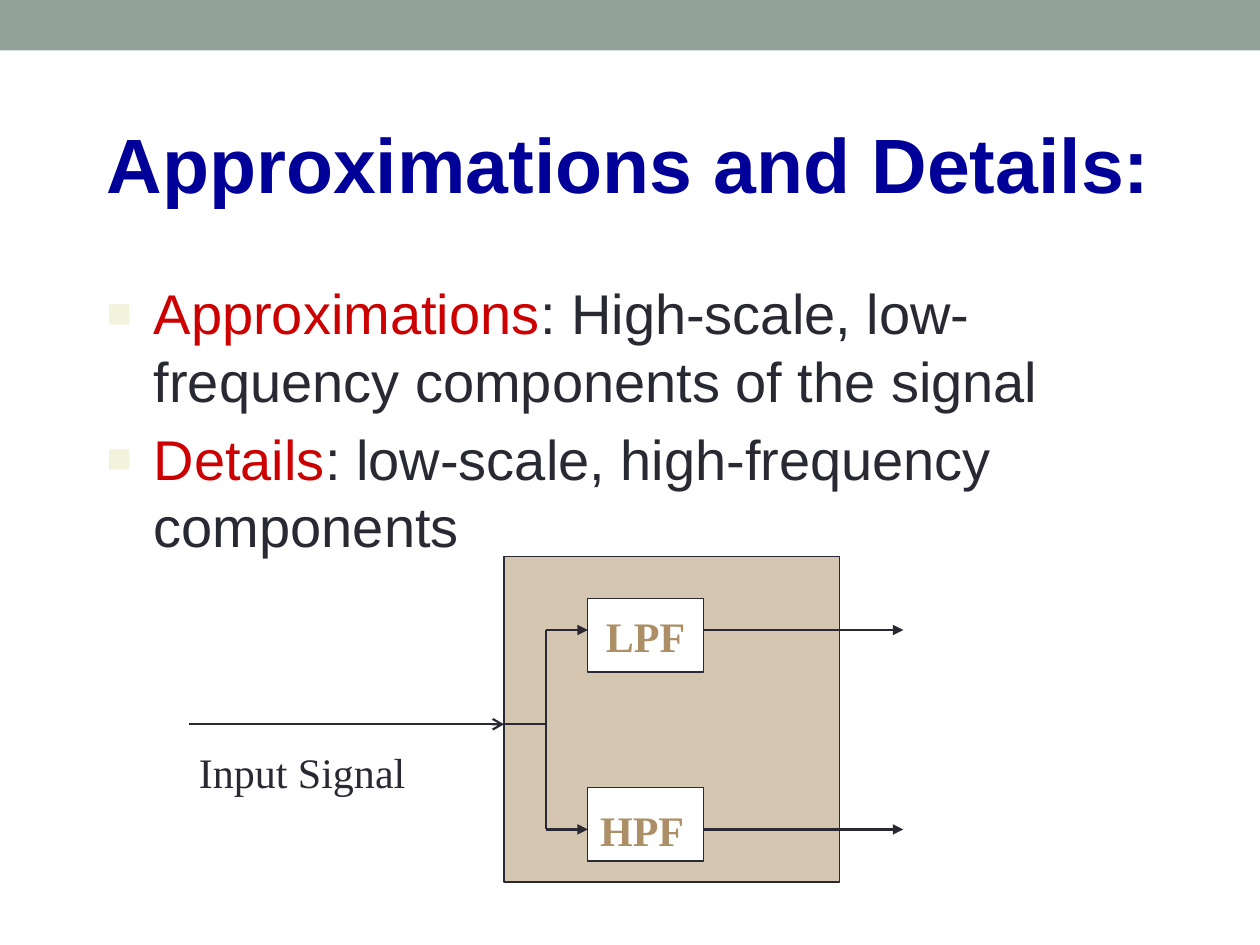
from lxml import etree
from pptx import Presentation
from pptx.dml.color import RGBColor
from pptx.enum.shapes import MSO_CONNECTOR, MSO_SHAPE
from pptx.enum.text import MSO_ANCHOR, PP_ALIGN
from pptx.oxml.ns import qn
from pptx.util import Cm, Pt

RECTANGLE = MSO_SHAPE.RECTANGLE
STRAIGHT = MSO_CONNECTOR.STRAIGHT
MIDDLE, TOP = MSO_ANCHOR.MIDDLE, MSO_ANCHOR.TOP
CENTER = PP_ALIGN.CENTER

SANS, SERIF = "Arial", "Times New Roman"
INK, TAN, WHITE = "292934", "AD8F67", "FFFFFF"
SAGE, NAVY, RED, CREAM = "93A299", "000099", "CC0000", "F3F2DC"


def color(value):
    return RGBColor.from_string(value)


def add_span(para, text, size, font, hue, bold=False):
    span = para.add_run()
    span.text = text
    span.font.size = Pt(size)
    span.font.name = font
    span.font.bold = bold
    span.font.color.rgb = color(hue)


def add_text_box(page, left, top, width, height, anchor=TOP, wrap=True):
    box = page.shapes.add_textbox(Cm(left), Cm(top), Cm(width), Cm(height))
    box.text_frame.word_wrap = wrap
    box.text_frame.vertical_anchor = anchor
    return box.text_frame


def add_rectangle(page, left, top, width, height, fill, line=None, opacity=100):
    box = page.shapes.add_shape(RECTANGLE, Cm(left), Cm(top), Cm(width), Cm(height))
    box.shadow.inherit = False
    box.fill.solid()
    box.fill.fore_color.rgb = color(fill)
    if opacity < 100:
        tint = box.fill._xPr.find(qn("a:solidFill"))[0]
        etree.SubElement(tint, qn("a:alpha"), val=str(opacity * 1000))
    if line:
        box.line.color.rgb = color(line)
        box.line.width = Pt(0.75)
    else:
        box.line.fill.background()
    return box


def add_wire(page, x1, y1, x2, y2, head=None, weight=1.25):
    wire = page.shapes.add_connector(STRAIGHT, Cm(x1), Cm(y1), Cm(x2), Cm(y2))
    wire.line.color.rgb = color(INK)
    wire.line.width = Pt(weight)
    if head:
        etree.SubElement(wire.line._get_or_add_ln(), qn("a:tailEnd"), type=head)
    etree.SubElement(wire._element.spPr, qn("a:effectLst"))


def add_bullet(para, indent):
    props = para._p.get_or_add_pPr()
    props.set("marL", str(Cm(indent)))
    props.set("indent", str(-Cm(indent)))
    bullet_color = etree.SubElement(props, qn("a:buClr"))
    etree.SubElement(bullet_color, qn("a:srgbClr"), val=CREAM)
    etree.SubElement(props, qn("a:buSzPct"), val="75000")
    etree.SubElement(props, qn("a:buFont"), typeface=SANS)
    etree.SubElement(props, qn("a:buChar"), char="■")


def add_title(page, left, top, width, height):
    frame = add_text_box(page, left, top, width, height, MIDDLE)
    add_span(frame.paragraphs[0], "Approximations and Details:", 44, SANS, NAVY, True)


def add_definitions(page, left, top, width, height):
    definitions = [
        ("Approximations", ": High-scale, low-frequency components of the signal"),
        ("Details", ": low-scale, high-frequency components"),
    ]
    frame = add_text_box(page, left, top, width, height)
    for index, (term, meaning) in enumerate(definitions):
        para = frame.add_paragraph() if index else frame.paragraphs[0]
        add_bullet(para, 0.95)
        if index:
            para.space_before = Pt(6.4)
        add_span(para, term, 32, SANS, RED)
        add_span(para, meaning, 32, SANS, INK)


def add_filter_diagram(page, left, top, width, height):
    block_x, split_x, filter_x = left + 6.35, left + 7.2, left + 8.04
    input_y, low_y, high_y = top + 3.38, top + 1.48, top + 5.5
    filter_w, filter_h = 2.33, 1.48

    # Filter bank and its input
    add_rectangle(page, block_x, top, 6.77, height, TAN, INK, opacity=50)
    add_wire(page, left, input_y, block_x, input_y, "arrow")
    label = add_text_box(page, left - 0.05, input_y + 0.33, 5.54, 1.27)
    add_span(label.paragraphs[0], "Input Signal", 24, SERIF, INK)

    # Split into two branches
    add_wire(page, block_x, input_y, split_x, input_y)
    add_wire(page, split_x, low_y, split_x, high_y)

    # Filters with their inputs and outputs
    low_top, high_top = top + 0.85, top + 4.66
    for wire_y, filter_top, weight in ((low_y, low_top, 0.75), (high_y, high_top, 1.25)):
        add_wire(page, split_x, wire_y, filter_x, wire_y, "triangle", weight)
        add_rectangle(page, filter_x, filter_top, filter_w, filter_h, WHITE, INK)
        add_wire(page, filter_x + filter_w, wire_y, left + width, wire_y, "triangle")

    # Filter names
    low_name = add_text_box(page, filter_x, low_top, filter_w, filter_h, MIDDLE, False)
    low_name.paragraphs[0].alignment = CENTER
    add_span(low_name.paragraphs[0], "LPF", 24, SERIF, TAN, True)
    high_name = add_text_box(page, filter_x, high_top + 0.21, 2.75, 1.27)
    add_span(high_name.paragraphs[0], "HPF", 24, SERIF, TAN, True)


def main():
    deck = Presentation()
    deck.slide_width, deck.slide_height = Cm(25.4), Cm(19.05)
    page = deck.slides.add_slide(deck.slide_layouts[6])
    add_rectangle(page, 0, 0, 25.4, 1.02, SAGE)
    add_title(page, 1.9, 1.7, 21.6, 3.18)
    add_definitions(page, 1.9, 5.5, 21.6, 6.15)
    add_filter_diagram(page, 3.81, 11.22, 14.4, 6.56)
    deck.save("out.pptx")


if __name__ == "__main__":
    main()
